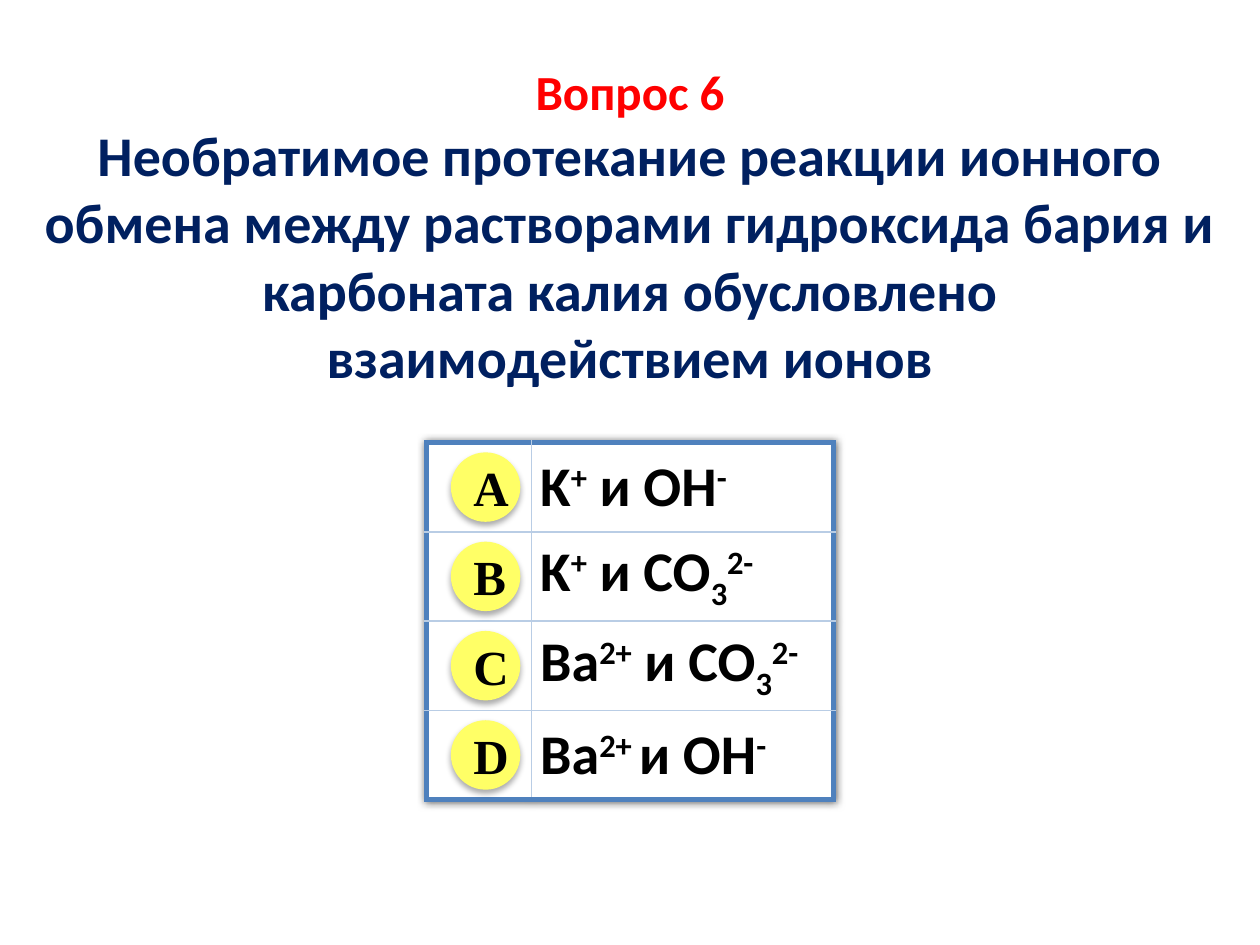
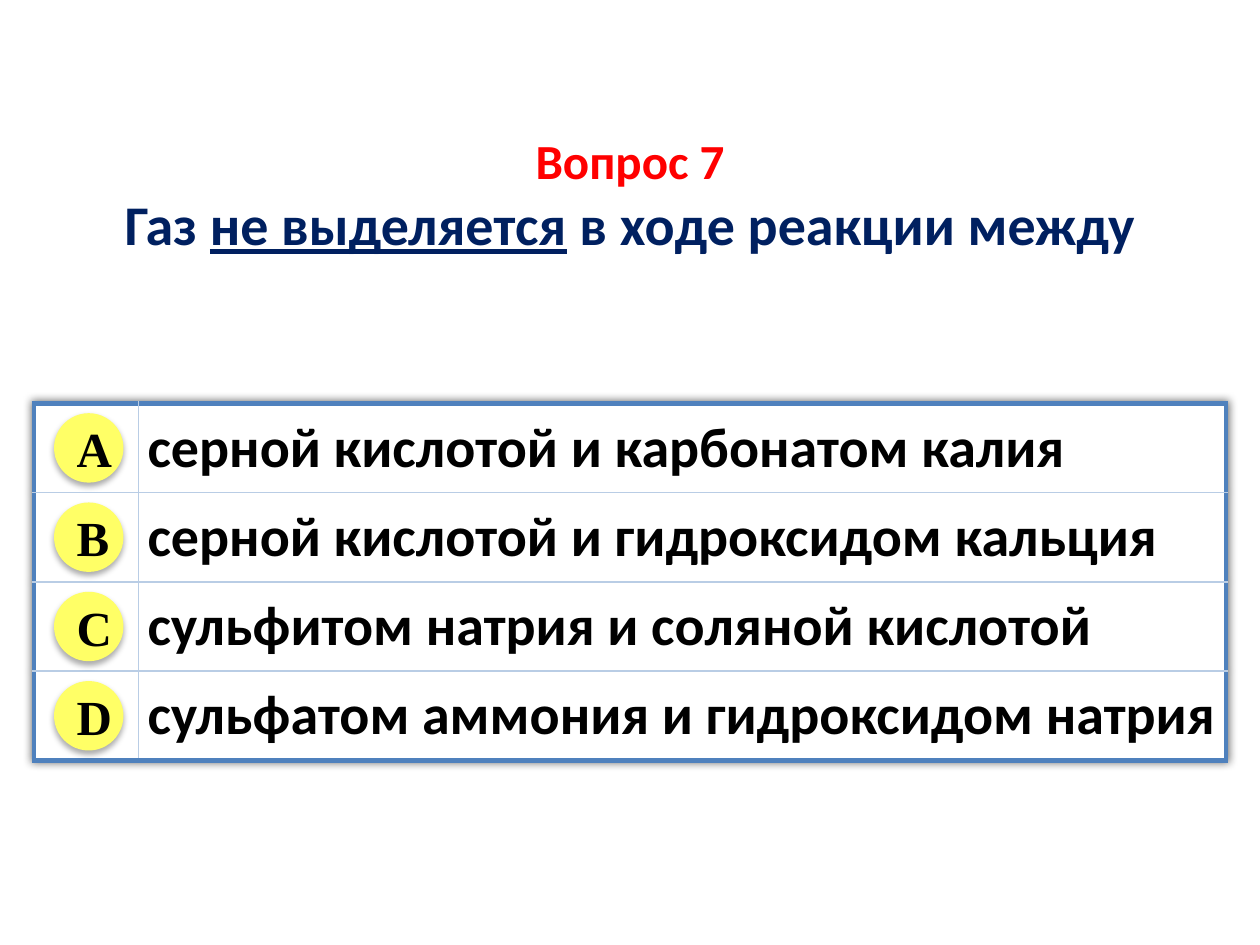
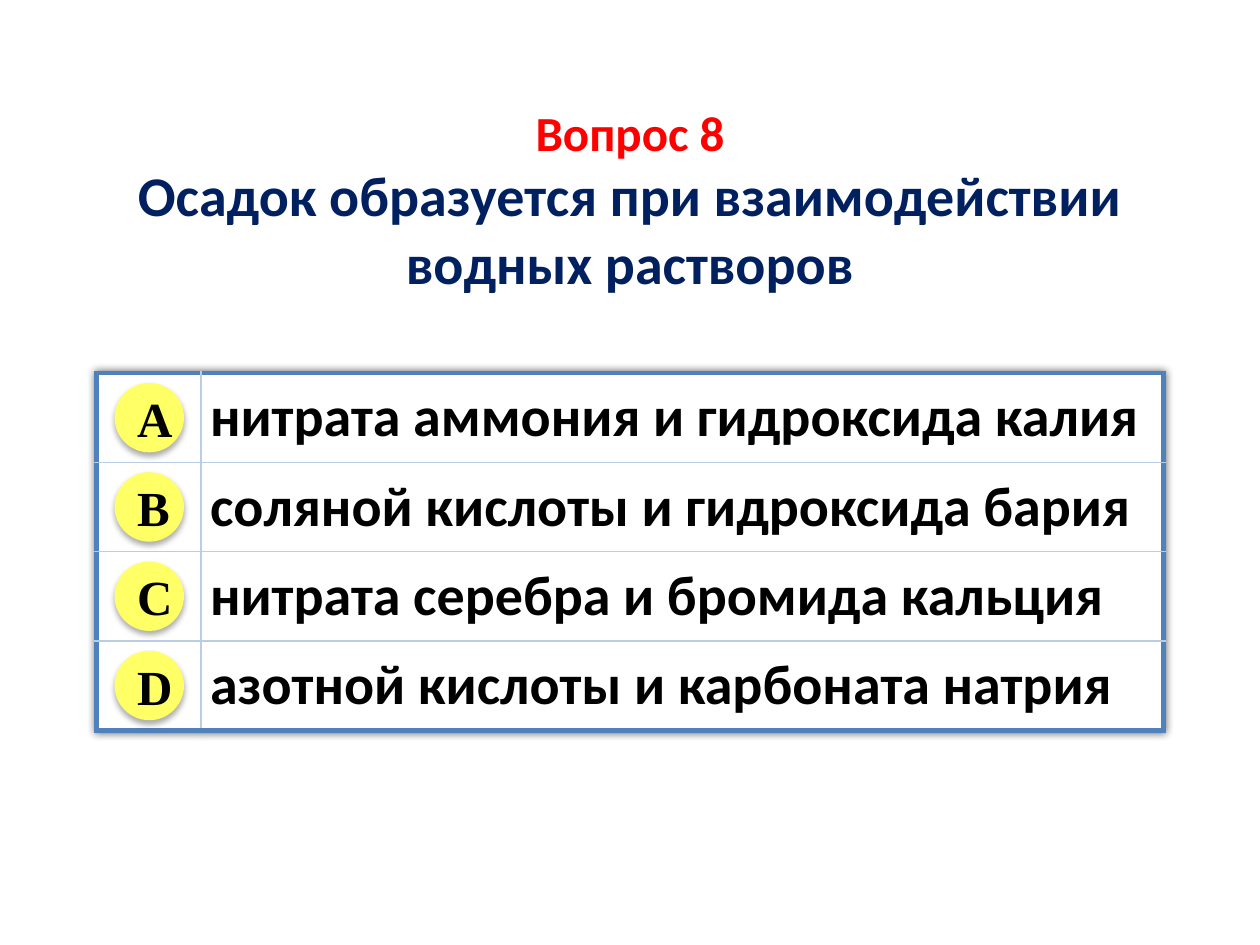
"""Build three quiz slides about ion exchange reactions."""
from lxml import etree
from pptx import Presentation
from pptx.dml.color import RGBColor
from pptx.enum.shapes import MSO_SHAPE
from pptx.enum.text import MSO_ANCHOR, MSO_AUTO_SIZE, PP_ALIGN
from pptx.oxml.ns import qn
from pptx.util import Cm, Pt

OVAL = MSO_SHAPE.OVAL
TOP, MIDDLE = MSO_ANCHOR.TOP, MSO_ANCHOR.MIDDLE
CENTER = PP_ALIGN.CENTER
GROW = MSO_AUTO_SIZE.SHAPE_TO_FIT_TEXT

WIDTH, HEIGHT = 25.4, 19.05
ROW, KEY, DOT = 1.8, 2.11, 1.4
SANS, SERIF = "Calibri", "Times New Roman"
RED, NAVY, BLACK, WHITE = "FF0000", "002060", "000000", "FFFFFF"
BLUE, PALE, YELLOW = "4F81BD", "B9CDE5", "FFFF66"
UP, DOWN = 30000, -25000


def rgb(code):
    """Turn a hex string into a colour."""
    return RGBColor.from_string(code)


def paint(item, code):
    """Fill a shape or cell with one colour."""
    item.fill.solid()
    item.fill.fore_color.rgb = rgb(code)


def write(para, text, size, code, face=SANS, line=None, base=0):
    """Add one bold run to a paragraph."""
    run = para.add_run()
    run.text = text
    font = run.font
    font.name, font.size, font.bold = face, Pt(size), True
    font.color.rgb = rgb(code)
    font.underline = line
    if base:
        run._r.get_or_add_rPr().set("baseline", str(base))


def tint(parent, code, alpha=None):
    """Add a hex colour, perhaps see-through, to an XML node."""
    node = etree.SubElement(parent, qn("a:srgbClr"), val=code)
    if alpha:
        etree.SubElement(node, qn("a:alpha"), val=str(alpha * 1000))


def shade(parent, blur, dist, alpha):
    """Add a soft black shadow to an XML node."""
    for old in parent.findall(qn("a:effectLst")):
        parent.remove(old)
    node = etree.Element(qn("a:effectLst"))
    cast = etree.SubElement(node, qn("a:outerShdw"), blurRad=str(Pt(blur)),
                            dist=str(Pt(dist)), dir="5400000",
                            algn="ctr", rotWithShape="0")
    tint(cast, BLACK, alpha)
    style = parent.find(qn("a:tableStyleId"))
    if style is None:
        parent.append(node)
    else:
        style.addprevious(node)


def edge(cell, side, outer):
    """Draw one side of a cell, thick if it lies on the rim."""
    code, width = (BLUE, 3) if outer else (PALE, 1)
    props = cell._tc.get_or_add_tcPr()
    line = etree.SubElement(props, qn("a:ln" + side), w=str(Pt(width)))
    tint(etree.SubElement(line, qn("a:solidFill")), code)


def title(slide, number, runs, top, height):
    """Place the question number and its wording."""
    box = slide.shapes.title
    box.left, box.top = Cm(0.6), Cm(top)
    box.width, box.height = Cm(24.2), Cm(height)
    paint(box, WHITE)
    frame = box.text_frame
    frame.word_wrap, frame.auto_size = True, GROW
    frame.vertical_anchor = TOP
    head, body = frame.paragraphs[0], frame.add_paragraph()
    head.alignment = body.alignment = CENTER
    write(head, f"Вопрос {number}", 28, RED)
    for text, line in runs:
        write(body, text, 32, NAVY, line=line)


def grid(slide, rows, top, width):
    """Add the centred table of answers."""
    left, count = (WIDTH - width) / 2, len(rows)
    table = slide.shapes.add_table(count, 2, Cm(left), Cm(top), Cm(width),
                                   Cm(ROW * count)).table
    table.first_row = table.horz_banding = False
    shade(table._tbl.tblPr, 5, 0, 60)
    table.columns[0].width = Cm(KEY)
    table.columns[1].width = Cm(width - KEY)
    for i, runs in enumerate(rows):
        table.rows[i].height = Cm(ROW)
        for j in range(2):
            cell = table.cell(i, j)
            cell.margin_left = cell.margin_right = Cm(0.18)
            cell.margin_top = cell.margin_bottom = 0
            cell.vertical_anchor = MIDDLE
            rim = {"L": j == 0, "R": j == 1, "T": i == 0, "B": i == count - 1}
            for side, outer in rim.items():
                edge(cell, side, outer)
            paint(cell, WHITE)
        for text, base in runs:
            write(table.cell(i, 1).text_frame.paragraphs[0], text, 32, BLACK,
                  base=base)


def dots(slide, left, top):
    """Add the column of lettered circles."""
    group = slide.shapes.add_group_shape()
    for i, mark in enumerate("ABCD"):
        y = top + i * ROW + (ROW - DOT) / 2
        dot = group.shapes.add_shape(OVAL, Cm(left), Cm(y), Cm(DOT), Cm(DOT))
        paint(dot, YELLOW)
        dot.line.fill.background()
        shade(dot._element.spPr, 3.5, 2.2, 32)
        frame = dot.text_frame
        frame.word_wrap, frame.vertical_anchor = True, MIDDLE
        para = frame.paragraphs[0]
        para.alignment = CENTER
        write(para, mark, 28, BLACK, SERIF)


def plain(*texts):
    """Make one-run table rows."""
    return [[(text, 0)] for text in texts]


def quiz(deck, number, runs, head, rows, top, width, left):
    """Build one question slide."""
    slide = deck.slides.add_slide(deck.slide_layouts[5])
    title(slide, number, runs, *head)
    grid(slide, rows, top, width)
    dots(slide, left, top)


def main():
    """Build and save the deck."""
    deck = Presentation()
    deck.slide_width, deck.slide_height = Cm(WIDTH), Cm(HEIGHT)
    quiz(deck, 6,
         [("Необратимое протекание реакции ионного обмена между растворами "
           "гидроксида бария и карбоната калия обусловлено "
           "взаимодействием ионов", None)],
         (1.12, 6.93),
         [[("K", 0), ("+", UP), (" и OH", 0), ("-", UP)],
          [("K", 0), ("+", UP), (" и CO", 0), ("3", DOWN), ("2-", UP)],
          [("Ba", 0), ("2+", UP), (" и CO", 0), ("3", DOWN), ("2-", UP)],
          [("Ba", 0), ("2+ ", UP), ("и OH", 0), ("-", UP)]],
         8.92, 8.2, 9.09)
    quiz(deck, 7,
         [("Газ ", None), ("не выделяется", True),
          (" в ходе реакции между", None)],
         (2.51, 2.82),
         plain("серной кислотой и карбонатом калия",
               "серной кислотой и гидроксидом кальция",
               "сульфитом натрия и соляной кислотой",
               "сульфатом аммония и гидроксидом натрия"),
         8.13, 24.03, 1.09)
    quiz(deck, 8,
         [("Осадок образуется при взаимодействии водных растворов", None)],
         (1.93, 4.19),
         plain("нитрата аммония и гидроксида калия",
               "соляной кислоты и гидроксида бария",
               "нитрата серебра и бромида кальция",
               "азотной кислоты и карбоната натрия"),
         7.52, 21.51, 2.31)
    deck.save("out.pptx")


if __name__ == "__main__":
    main()
